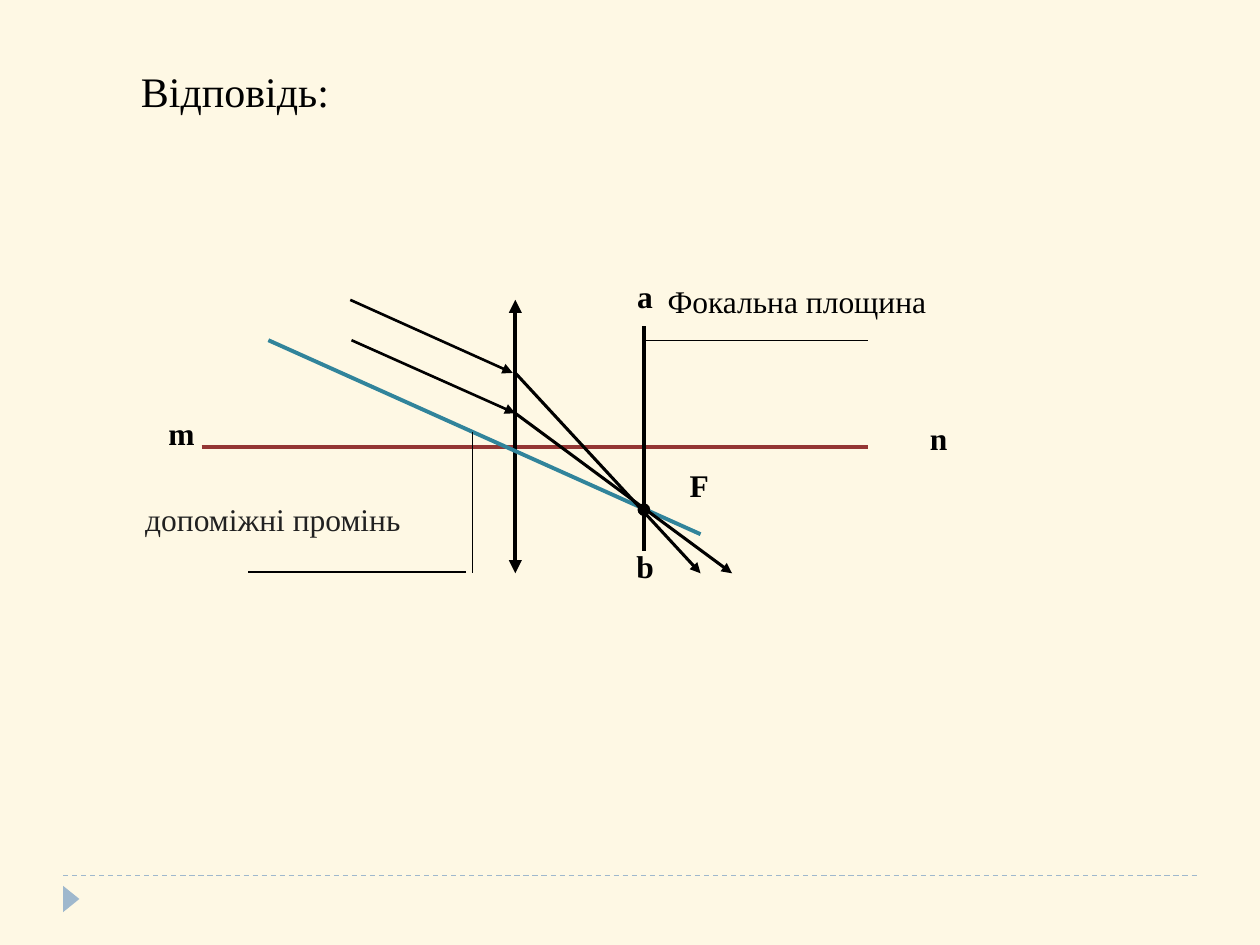
"""Build the answer slide: parallel rays meeting in the focal plane of a lens."""
from dataclasses import dataclass

from lxml.etree import SubElement
from pptx import Presentation
from pptx.dml.color import RGBColor
from pptx.enum.dml import MSO_LINE
from pptx.enum.shapes import MSO_CONNECTOR, MSO_SHAPE
from pptx.enum.text import MSO_ANCHOR, PP_ALIGN
from pptx.oxml.ns import qn
from pptx.util import Inches, Pt

Point = tuple[float, float]


@dataclass(frozen=True)
class Theme:
    background: str = "FEF8E4"
    ink: str = "000000"
    soft_ink: str = "212121"
    axis: str = "943634"
    auxiliary: str = "31849B"
    decoration: str = "9FB8CD"
    font: str = "Times New Roman"
    title_size: int = 24
    label_size: int = 18
    thin: float = 0.75


THEME = Theme()


@dataclass(frozen=True)
class Segment:
    start: Point
    end: Point
    width: float = THEME.thin
    color: str = THEME.ink
    arrows: tuple[str, ...] = ()
    dashed: bool = False


@dataclass(frozen=True)
class Label:
    text: str
    left: float
    top: float
    width: float = 0.88
    height: float = 0.72
    size: int = THEME.label_size
    color: str = THEME.ink
    bold: bool = False
    align: PP_ALIGN = PP_ALIGN.CENTER
    inset: float = 0.1


LENS_X, FOCAL_X, AXIS_RIGHT = 4.09, 5.11, 6.89
TOP, BOTTOM, AXIS_Y = 2.38, 4.55, 3.55
UPPER_HIT, LOWER_HIT = (LENS_X, 2.96), (LENS_X, 3.28)
CALLOUT_Y = 2.7
FOCUS_SIZE = 0.09
END_ARROW = ("a:tailEnd",)

SEGMENTS = (
    Segment((0.5, 6.95), (9.5, 6.95), color=THEME.decoration, dashed=True),
    Segment((1.6, AXIS_Y), (AXIS_RIGHT, AXIS_Y), 2.5, THEME.axis),
    Segment((LENS_X, TOP), (LENS_X, BOTTOM), 2.5, arrows=("a:headEnd", "a:tailEnd")),
    Segment((2.78, TOP), (4.07, 2.96), 1.5, arrows=END_ARROW),
    Segment((2.79, CALLOUT_Y), LOWER_HIT, 1.5, arrows=END_ARROW),
    Segment((FOCAL_X, 2.59), (FOCAL_X, 4.37), 2.25),
    Segment((2.13, CALLOUT_Y), (5.56, 4.24), 2.25, THEME.auxiliary),
    Segment(UPPER_HIT, (5.56, BOTTOM), 1.75, arrows=END_ARROW),
    Segment(LOWER_HIT, (5.81, BOTTOM), 1.75, arrows=END_ARROW),
    Segment((FOCAL_X, CALLOUT_Y), (AXIS_RIGHT, CALLOUT_Y)),
    Segment((3.75, 3.43), (3.75, BOTTOM)),
    Segment((3.7, 4.54), (1.97, 4.54)),
)

LABELS = (
    Label("Відповідь:", 1.02, 0.47, 8.05, 0.81, THEME.title_size, align=PP_ALIGN.LEFT),
    Label("Фокальна площина", 4.6, 2.19, 3.45, 0.68),
    Label("допоміжні промінь", 0.14, 3.92, 3.75, 1.26, color=THEME.soft_ink, inset=0.4),
    Label("n", 7.01, 3.28, bold=True),
    Label("F", 5.11, 3.65, bold=True),
    Label("m", 1, 3.24, bold=True),
    Label("а", 4.68, 2.15, bold=True),
    Label("b", 4.68, 4.29, bold=True),
)


def set_attributes(target: object, values: dict[str, object]) -> None:
    for name, value in values.items():
        setattr(target, name, value)


def draw_segment(slide, segment: Segment) -> None:
    ends = (Inches(value) for value in (*segment.start, *segment.end))
    connector = slide.shapes.add_connector(MSO_CONNECTOR.STRAIGHT, *ends)
    connector.line.color.rgb = RGBColor.from_string(segment.color)
    connector.line.width = Pt(segment.width)
    if segment.dashed:
        connector.line.dash_style = MSO_LINE.DASH
    properties = connector._element.spPr
    outline = properties.find(qn("a:ln"))
    for arrow in segment.arrows:
        SubElement(outline, qn(arrow), type="triangle")
    SubElement(properties, qn("a:effectLst"))


def draw_label(slide, label: Label) -> None:
    box = (Inches(value) for value in (label.left, label.top, label.width, label.height))
    frame = slide.shapes.add_textbox(*box).text_frame
    set_attributes(frame, {
        "word_wrap": True,
        "vertical_anchor": MSO_ANCHOR.TOP,
        "margin_left": Inches(label.inset),
    })
    paragraph = frame.paragraphs[0]
    paragraph.alignment = label.align
    run = paragraph.add_run()
    run.text = label.text
    set_attributes(run.font, {"name": THEME.font, "size": Pt(label.size), "bold": label.bold})
    run.font.color.rgb = RGBColor.from_string(label.color)


def draw_solid(slide, kind: MSO_SHAPE, left: float, top: float, width: float,
               height: float, color: str, rotation: float = 0, outlined: bool = False) -> None:
    box = (Inches(value) for value in (left, top, width, height))
    shape = slide.shapes.add_shape(kind, *box)
    shape.rotation = rotation
    shape.shadow.inherit = False
    shape.fill.solid()
    shape.fill.fore_color.rgb = RGBColor.from_string(color)
    if outlined:
        shape.line.color.rgb = RGBColor.from_string(color)
        shape.line.width = Pt(THEME.thin)
    else:
        shape.line.fill.background()


def main() -> None:
    presentation = Presentation()
    set_attributes(presentation, {"slide_width": Inches(10), "slide_height": Inches(7.5)})
    slide = presentation.slides.add_slide(presentation.slide_layouts[6])
    slide.background.fill.solid()
    slide.background.fill.fore_color.rgb = RGBColor.from_string(THEME.background)

    draw_solid(slide, MSO_SHAPE.ISOSCELES_TRIANGLE, 0.46, 7.07, 0.21, 0.13,
               THEME.decoration, rotation=90)
    for segment in SEGMENTS:
        draw_segment(slide, segment)
    for label in LABELS:
        draw_label(slide, label)
    draw_solid(slide, MSO_SHAPE.OVAL, FOCAL_X - FOCUS_SIZE / 2, 4, FOCUS_SIZE, FOCUS_SIZE,
               THEME.ink, outlined=True)
    presentation.save("out.pptx")


if __name__ == "__main__":
    main()
